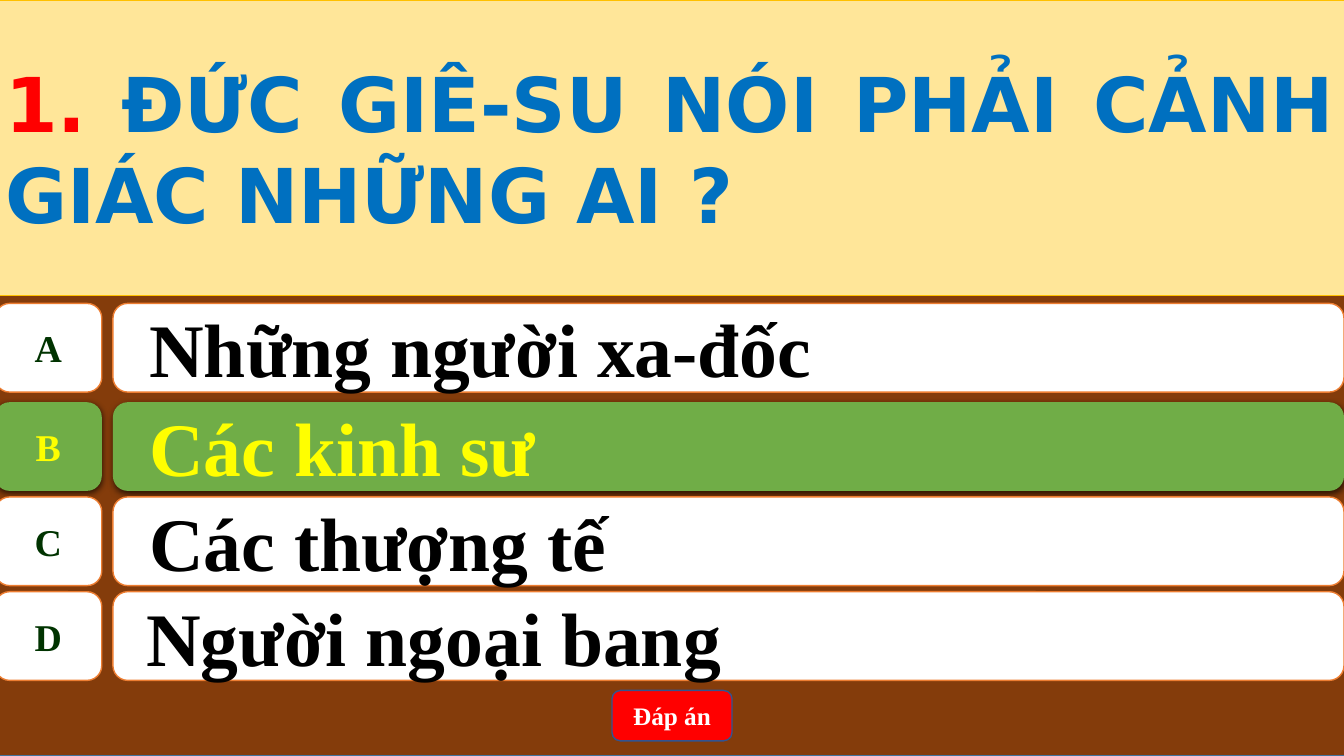
"""Build a quiz slide with one question, four choices and a marked answer."""
from dataclasses import dataclass

from lxml import etree
from pptx import Presentation, util as u
from pptx.dml.color import RGBColor
from pptx.enum import shapes as s, text as t
from pptx.oxml import ns

WIDE, HIGH = 13.33, 7.5
LEFT, SPAN = -0.05, 13.39
KEY, BAR, BAR_X = 1.06, 12.21, 1.12
ROW = 0.88
ROWS = [
    ("A", "Những người xa-đốc", 3.01, 0.22, False),
    ("B", "Các kinh sư", 3.99, 0.22, True),
    ("C", "Các thượng tế", 4.93, 0.22, False),
    ("D", "Người ngoại bang", 5.87, 0.19, False),
]


@dataclass(frozen=True)
class Theme:
    ground: str = "843C0B"
    rim: str = "43739E"
    sand: str = "FFE699"
    gold: str = "FFC000"
    red: str = "FF0000"
    blue: str = "0070C0"
    navy: str = "325491"
    white: str = "FFFFFF"
    black: str = "000000"
    edge: str = "ED7D31"
    dark: str = "003300"
    green: str = "70AD47"
    glow: str = "FFFF00"
    serif: str = "Times New Roman"
    sans: str = "DejaVu Sans"
    big: int = 54
    mid: int = 27
    small: int = 18


LOOK = Theme()


def paint(shape, fill, line=None, width=1):
    shape.fill.solid()
    shape.fill.fore_color.rgb = RGBColor.from_string(fill)
    if line:
        shape.line.color.rgb = RGBColor.from_string(line)
        shape.line.width = u.Pt(width)
    else:
        shape.line.fill.background()


def add_box(home, kind, area, fill, line=None):
    box = home.add_shape(kind, *map(u.Inches, area))
    box.shadow.inherit = False
    paint(box, fill, line)
    return box


def style(font, face, size, color):
    font.name, font.size, font.bold = face, u.Pt(size), True
    font.color.rgb = RGBColor.from_string(color)


def write(box, words, size, color, align=t.PP_ALIGN.CENTER, wrap=True):
    frame = box.text_frame
    frame.word_wrap = wrap
    frame.vertical_anchor = t.MSO_ANCHOR.MIDDLE
    para = frame.paragraphs[0]
    para.text, para.alignment = words, align
    style(para.font, LOOK.serif, size, color)
    return para


def add_shade(box):
    effect = box.element.spPr.find(ns.qn("a:effectLst"))
    shade = etree.SubElement(effect, ns.qn("a:outerShdw"), blurRad=str(u.Pt(4.5)),
                             dist=str(u.Pt(1.5)), dir="5400000", rotWithShape="0")
    color = etree.SubElement(shade, ns.qn("a:srgbClr"), val=LOOK.black)
    etree.SubElement(color, ns.qn("a:alpha"), val="63000")


def add_row(slide, key, words, top, indent, right):
    fill, line = (LOOK.green, None) if right else (LOOK.white, LOOK.edge)
    home = slide.shapes.add_group_shape().shapes
    tag = add_box(home, s.MSO_SHAPE.FLOWCHART_ALTERNATE_PROCESS,
                  (LEFT, top, KEY, ROW), fill, line)
    write(tag, key, LOOK.mid, LOOK.glow if right else LOOK.dark, wrap=False)
    bar = add_box(home, s.MSO_SHAPE.ROUNDED_RECTANGLE,
                  (BAR_X, top, BAR, ROW), fill, line)
    para = write(bar, words, LOOK.big, LOOK.glow if right else LOOK.black,
                 t.PP_ALIGN.LEFT)
    props = para._p.get_or_add_pPr()
    props.set("marL", str(u.Inches(0.5)))
    props.set("indent", str(u.Inches(indent - 0.5)))
    if right:
        add_shade(tag)
        add_shade(bar)


def add_title(slide):
    title = slide.shapes.title
    title.left, title.top, title.width, title.height = map(
        u.Inches, (LEFT, 0, SPAN, 2.93))
    paint(title, LOOK.sand, LOOK.gold, 0.5)
    frame = title.text_frame
    frame.auto_size = t.MSO_AUTO_SIZE.NONE
    frame.word_wrap = True
    frame.vertical_anchor = t.MSO_ANCHOR.MIDDLE
    para = frame.paragraphs[0]
    para.alignment = t.PP_ALIGN.JUSTIFY
    for words, color in (("1. ", LOOK.red),
                         ("ĐỨC GIÊ-SU NÓI PHẢI CẢNH GIÁC NHỮNG AI ?", LOOK.blue)):
        run = para.add_run()
        run.text = words
        style(run.font, LOOK.sans, LOOK.big, color)
    return title


def main():
    deck = Presentation()
    deck.slide_width, deck.slide_height = u.Inches(WIDE), u.Inches(HIGH)
    slide = deck.slides.add_slide(deck.slide_layouts.get_by_name("Title Only"))
    ground = add_box(slide.shapes, s.MSO_SHAPE.RECTANGLE,
                     (LEFT, 0, SPAN, HIGH), LOOK.ground, LOOK.rim)
    title = add_title(slide)
    title.element.addprevious(ground.element)
    for row in ROWS:
        add_row(slide, *row)
    button = add_box(slide.shapes, s.MSO_SHAPE.ROUNDED_RECTANGLE,
                     (6.07, 6.85, 1.19, 0.5), LOOK.red, LOOK.navy)
    write(button, "Đáp án", LOOK.small, LOOK.white)
    deck.save("out.pptx")


if __name__ == "__main__":
    main()
